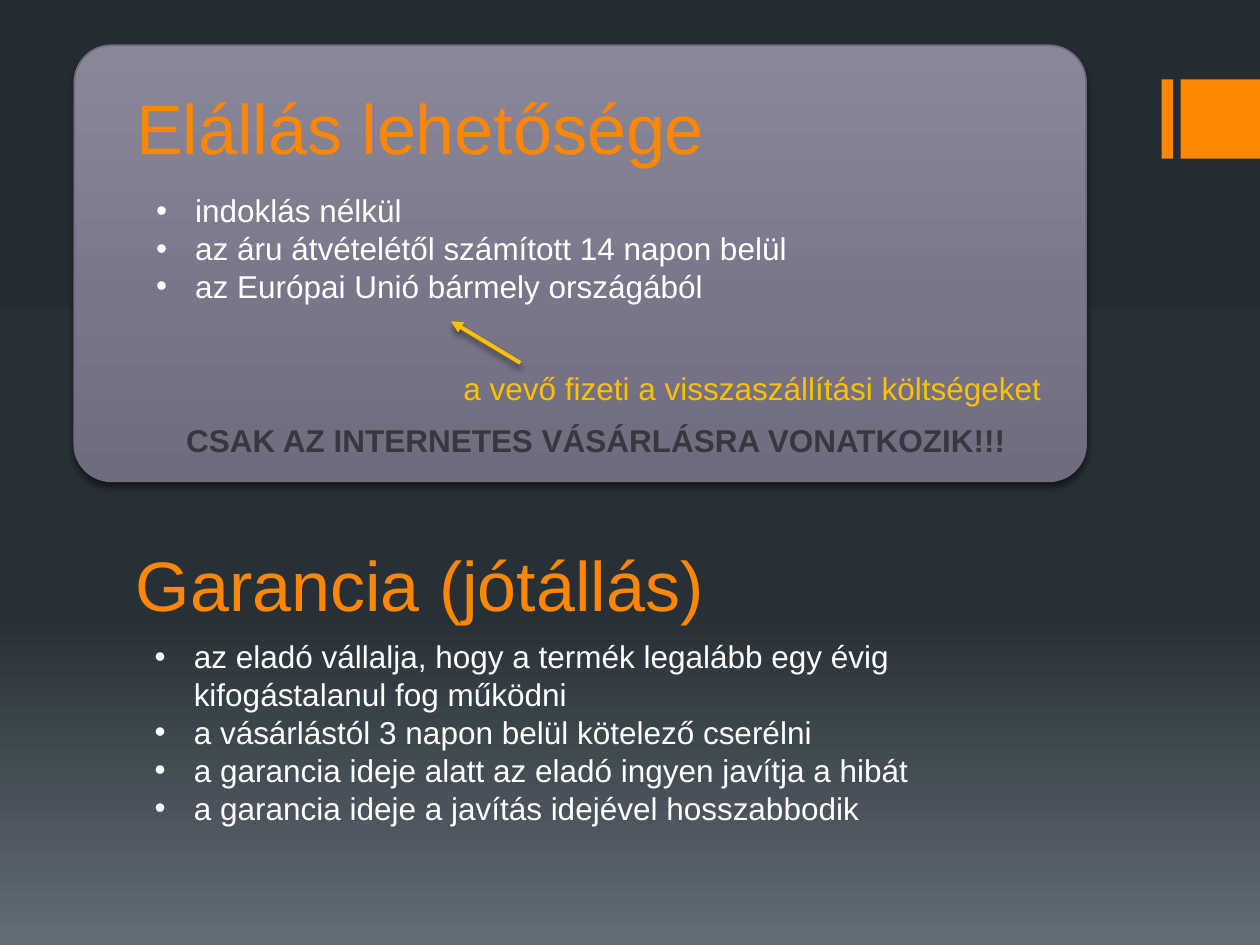
from dataclasses import dataclass

from pptx import Presentation
from pptx.dml.color import RGBColor
from pptx.enum.shapes import MSO_CONNECTOR, MSO_SHAPE
from pptx.enum.text import MSO_ANCHOR, MSO_AUTO_SIZE, PP_ALIGN
from pptx.oxml import parse_xml
from pptx.oxml.ns import nsdecls, qn
from pptx.util import Inches, Pt


@dataclass(frozen=True)
class Theme:
    font: str = "Arial"
    heading_size: int = 40
    body_size: int = 18
    accent: str = "FF8600"
    body: str = "FFFFFF"
    note: str = "FFC000"
    warning: str = "38363E"
    card_line: str = "6F6C7D"
    background: tuple = ((0, "242C33"), (65, "273037"), (100, "636D76"))
    card: tuple = ((0, "8A8898"), (60, "7A768A"), (100, "6F6C7D"))


def rgb(color):
    return RGBColor.from_string(color)


def set_gradient(parent, stops):
    marks = "".join(
        f'<a:gs pos="{pos * 1000}"><a:srgbClr val="{color}"/></a:gs>'
        for pos, color in stops
    )
    grad = parse_xml(
        f'<a:gradFill {nsdecls("a")} rotWithShape="1"><a:gsLst>{marks}</a:gsLst>'
        '<a:lin ang="5400000" scaled="0"/></a:gradFill>'
    )
    parent.replace(parent.find(qn("a:solidFill")), grad)


def add_shadow(sp):
    sp.element.spPr.append(parse_xml(
        f'<a:effectLst {nsdecls("a")}><a:outerShdw blurRad="{Pt(3.8)}" '
        f'dist="{Pt(3)}" dir="5400000" rotWithShape="0"><a:srgbClr val="000000">'
        '<a:alpha val="48000"/></a:srgbClr></a:outerShdw></a:effectLst>'
    ))


class SlideBuilder:
    def __init__(self, s, theme):
        self.s = s
        self.theme = theme

    def background(self):
        self.s.background.fill.solid()
        set_gradient(self.s.element.find(".//" + qn("p:bgPr")), self.theme.background)

    def shape(self, kind, box, color):
        sp = self.s.shapes.add_shape(kind, *map(Inches, box))
        sp.fill.solid()
        sp.fill.fore_color.rgb = rgb(color)
        return sp

    def bar(self, box):
        sp = self.shape(MSO_SHAPE.RECTANGLE, box, self.theme.accent)
        sp.line.fill.background()
        sp.shadow.inherit = False

    def card(self, box):
        sp = self.shape(MSO_SHAPE.ROUNDED_RECTANGLE, box, self.theme.card_line)
        sp.adjustments[0] = 0.085
        sp.line.color.rgb = rgb(self.theme.card_line)
        sp.line.width = Pt(1)
        set_gradient(sp.element.spPr, self.theme.card)
        add_shadow(sp)

    def paragraph(self, p, text, size, color, bold=False):
        p.text = text
        p.alignment = PP_ALIGN.LEFT
        style = {"name": self.theme.font, "size": Pt(size), "bold": bold}
        for r in p.runs:
            for name, value in style.items():
                setattr(r.font, name, value)
            r.font.color.rgb = rgb(color)

    def heading(self, text, top, is_title=False):
        box = [Inches(v) for v in (0.98, top, 8, 1.26)]
        if is_title:
            sp = self.s.shapes.title
            sp.element.getparent().append(sp.element)
            for name, value in zip(("left", "top", "width", "height"), box):
                setattr(sp, name, value)
        else:
            sp = self.s.shapes.add_textbox(*box)
        tf = sp.text_frame
        layout = {"word_wrap": True, "auto_size": MSO_AUTO_SIZE.NONE,
                  "vertical_anchor": MSO_ANCHOR.BOTTOM}
        for name, value in layout.items():
            setattr(tf, name, value)
        self.paragraph(tf.paragraphs[0], text, self.theme.heading_size, self.theme.accent)

    def text(self, lines, box, color, bold=False, bullets=False):
        tf = self.s.shapes.add_textbox(*map(Inches, box)).text_frame
        tf.word_wrap = False
        tf.auto_size = MSO_AUTO_SIZE.SHAPE_TO_FIT_TEXT
        for i, line in enumerate(lines):
            p = tf.add_paragraph() if i else tf.paragraphs[0]
            self.paragraph(p, line, self.theme.body_size, color, bold)
            if bullets:
                self.bullet(p)

    def bullet(self, p):
        pPr = p._p.get_or_add_pPr()
        pPr.set("marL", str(Inches(0.31)))
        pPr.set("indent", str(Inches(-0.31)))
        pPr.append(parse_xml(f'<a:buFont {nsdecls("a")} typeface="{self.theme.font}"/>'))
        pPr.append(parse_xml(f'<a:buChar {nsdecls("a")} char="•"/>'))

    def arrow(self, start, end):
        cx = self.s.shapes.add_connector(
            MSO_CONNECTOR.STRAIGHT, *map(Inches, start + end))
        cx.line.color.rgb = rgb(self.theme.note)
        cx.line.width = Pt(2.25)
        cx.element.spPr.find(qn("a:ln")).append(
            parse_xml(f'<a:tailEnd {nsdecls("a")} type="triangle"/>'))
        add_shadow(cx)


def main():
    prs = Presentation()
    prs.slide_width, prs.slide_height = Inches(10), Inches(7.5)
    theme = Theme()
    b = SlideBuilder(prs.slides.add_slide(prs.slide_layouts[5]), theme)

    b.background()
    for left, width in ((9.22, 0.09), (9.37, 0.63)):
        b.bar((left, 0.63, width, 0.63))

    b.card((0.59, 0.36, 8.03, 3.46))
    b.heading("Elállás lehetősége", 0.13, is_title=True)
    b.text(["indoklás nélkül",
            "az áru átvételétől számított 14 napon belül",
            "az Európai Unió bármely országából"],
           (1.14, 1.47, 5.26, 1.01), theme.body, bullets=True)
    b.arrow((4.13, 2.88), (3.58, 2.55))
    b.text(["a vevő fizeti a visszaszállítási költségeket"],
           (3.58, 2.88, 4.83, 0.4), theme.note)

    b.heading("Garancia (jótállás)", 3.75)
    b.text(["az eladó vállalja, hogy a termék legalább egy évig \vkifogástalanul fog működni",
            "a vásárlástól 3 napon belül kötelező cserélni",
            "a garancia ideje alatt az eladó ingyen javítja a hibát",
            "a garancia ideje a javítás idejével hosszabbodik"],
           (1.13, 5.01, 6.24, 1.62), theme.body, bullets=True)
    b.text(["CSAK AZ INTERNETES VÁSÁRLÁSRA VONATKOZIK!!!"],
           (1.38, 3.29, 6.77, 0.4), theme.warning, bold=True)

    prs.save("out.pptx")


if __name__ == "__main__":
    main()
